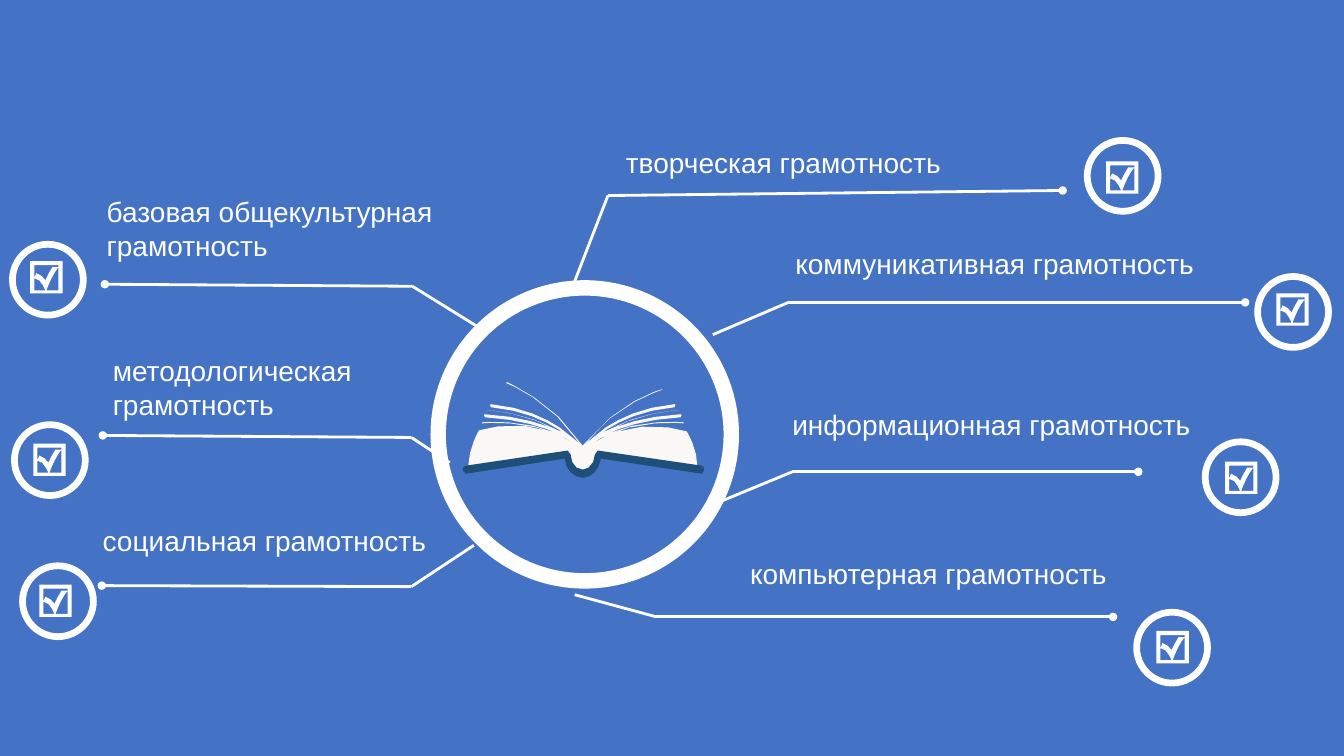
import math

from lxml import etree
from pptx import Presentation
from pptx.dml.color import RGBColor
from pptx.enum import shapes, text
from pptx.oxml.ns import qn
from pptx.util import Inches, Pt

WHITE, BLUE, PAPER, COVER = "FFFFFF", "4472C4", "F9F8F7", "1F4E79"
MAX_CURVE_STEPS = 4
BADGE = 0.77

# Outlines in hundredths of an inch, from the top left of their box
CHECKBOX = """M 4 4 L 4 29 L 15 29 C 13 25 10 17 4 17 L 6 12 C 11 14 12 15 15 19
    C 17 14 19 11 22 6 L 28 6 C 23 12 19 21 16 29 L 28 29 L 28 4
    M 0 0 L 32 0 L 32 32 L 0 32"""
PAGES = """M 222 49 C 204 43 156 37 119 66 C 82 36 35 42 16 48 C 16 48 6 64 5 86
    L 104 70 C 104 80 111 89 119 89 C 127 90 134 81 134 70 L 233 87
    C 233 65 222 49 222 49"""
SPINE = """M 119 95 C 110 95 102 87 101 76 L 3 91 L 0 88 L 0 85 L 3 83 L 104 68
    L 107 72 C 107 80 112 87 119 87 C 125 87 131 80 131 72 L 134 68 L 237 83
    L 239 85 L 239 88 L 237 91 L 137 76 C 135 87 128 95 119 95"""
LEAVES = """L 96 45 C 82 36 61 25 28 22 L 27 23 L 28 25 C 60 28 81 38 95 47 L 99 50
    C 63 29 24 28 24 28 C 24 28 64 29 101 52 L 97 50 C 82 42 58 34 22 32 L 21 33
    L 22 35 C 57 37 82 45 96 52 L 97 52 C 61 36 20 40 19 40 L 19 41
    C 20 41 65 36 102 56 L 118 68"""
FAN_START = "M 120 66 L 120 64 L 118 62 "
LEFT_TOP_LEAF = "C 91 19 44 1 44 0 L 43 1 C 44 1 89 19 116 61 "
RIGHT_TOP_LEAF = "C 86 21 41 8 41 8 L 40 7 C 41 7 88 21 116 61 "
BOOK_WIDTH = 238

# Label lines, label box, badge corner, checkbox corner, leader: dot, bend, hub end
LITERACIES = [
    (["базовая общекультурная", "грамотность"], (0.96, 1.88, 5.77, 0.77),
     (0.09, 2.39), (0.3, 2.59), [(1.04, 2.82), (4.09, 2.84), (4.72, 3.23)]),
    (["методологическая грамотность"], (1.02, 3.46, 3.09, 0.77),
     (0.11, 4.18), (0.33, 4.4), [(1.02, 4.32), (4.08, 4.34), (4.46, 4.59)]),
    (["социальная грамотность"], (0.92, 5.14, 7.37, 0.44),
     (0.19, 5.58), (0.39, 5.8), [(1.01, 5.81), (4.08, 5.82), (4.7, 5.41)]),
    (["творческая грамотность"], (6.11, 1.39, 5.94, 0.44),
     (10.75, 1.36), (10.97, 1.6), [(10.54, 1.89), (6.03, 1.94), (5.7, 2.79)]),
    (["коммуникативная грамотность"], (7.79, 2.4, 5.94, 0.44),
     (12.44, 2.71), (12.66, 2.91), [(12.35, 3), (7.82, 3), (7.07, 3.32)]),
    (["информационная грамотность"], (7.76, 3.99, 6.96, 0.44),
     (11.92, 4.35), (12.15, 4.58), [(11.29, 4.68), (7.86, 4.68), (7.11, 4.99)]),
    (["компьютерная грамотность"], (7.34, 5.47, 7.38, 0.44),
     (11.24, 6.04), (11.47, 6.26), [(11.04, 6.12), (6.51, 6.12), (5.7, 5.9)]),
]


def rgb(color):
    return RGBColor.from_string(color)


def paint(shape, color):
    shape.fill.solid()
    shape.fill.fore_color.rgb = rgb(color)
    shape.line.fill.background()
    shape.shadow.inherit = False


def sample_curve(curve):
    """Points along a cubic curve, fewer on a short one."""
    steps = min(MAX_CURVE_STEPS, math.ceil(math.dist(curve[0], curve[-1]) / 8))
    points = []
    for step in range(1, steps + 1):
        t = step / steps
        weights = ((1 - t) ** 3, 3 * t * (1 - t) ** 2, 3 * t * t * (1 - t), t ** 3)
        points.append(tuple(sum(w * p[axis] for w, p in zip(weights, curve))
                            for axis in (0, 1)))
    return points


def contours(outline):
    """Turn an outline into lists of points."""
    result = []
    tokens = iter(outline.split())
    for command in tokens:
        count = 3 if command == "C" else 1
        points = [(float(next(tokens)), float(next(tokens))) for _ in range(count)]
        if command == "M":
            result.append(points)
        elif command == "L":
            result[-1] += points
        else:
            result[-1] += sample_curve([result[-1][-1]] + points)
    return result


def add_outline(parent, left, top, outline, color, mirror_width=None):
    def place(point):
        x = point[0] if mirror_width is None else mirror_width - point[0]
        return Inches(left + x / 100), Inches(top + point[1] / 100)

    builder = None
    for contour in contours(outline):
        start, *rest = [place(point) for point in contour]
        if builder is None:
            builder = parent.build_freeform(*start, scale=1.0)
        else:
            builder.move_to(*start)
        builder.add_line_segments(rest, close=True)
    paint(builder.convert_to_shape(), color)


def add_ring(slide, left, top, size, thickness):
    ring = slide.shapes.add_shape(shapes.MSO_SHAPE.DONUT, Inches(left), Inches(top),
                                  Inches(size), Inches(size))
    ring.adjustments[0] = thickness
    paint(ring, WHITE)


def add_line(slide, start, end, dotted=False):
    line = slide.shapes.add_connector(shapes.MSO_CONNECTOR.STRAIGHT,
                                      *map(Inches, start + end))
    line.line.color.rgb = rgb(WHITE)
    line.line.width = Pt(2)
    properties = line.element.spPr
    if dotted:
        etree.SubElement(properties.find(qn("a:ln")), qn("a:headEnd"), type="oval")
    etree.SubElement(properties, qn("a:effectLst"))


def add_label(slide, box, lines):
    frame = slide.shapes.add_textbox(*map(Inches, box)).text_frame
    frame.word_wrap = True
    frame.auto_size = text.MSO_AUTO_SIZE.SHAPE_TO_FIT_TEXT
    frame.text = "\n".join(lines)
    for paragraph in frame.paragraphs:
        font = paragraph.runs[0].font
        font.name, font.size = "Arial", Pt(20)
        font.color.rgb = rgb(WHITE)


# Central ring with the open book
def add_hub(slide, left, top, size):
    add_ring(slide, left, top, size, 0.05)
    book = slide.shapes.add_group_shape().shapes
    corner = (left + 0.32, top + 1.01)
    add_outline(book, *corner, PAGES, PAPER)
    add_outline(book, *corner, SPINE, COVER)
    add_outline(book, *corner, FAN_START + LEFT_TOP_LEAF + LEAVES, PAPER)
    add_outline(book, *corner, FAN_START + RIGHT_TOP_LEAF + LEAVES, PAPER, BOOK_WIDTH)


# One kind of literacy: label, leader line and badge
def add_literacy(slide, lines, label_box, badge, checkbox, leader):
    dot, bend, hub_end = leader
    add_line(slide, dot, bend, dotted=True)
    add_line(slide, bend, hub_end)
    add_ring(slide, *badge, BADGE, 0.087)
    add_outline(slide.shapes, *checkbox, CHECKBOX, WHITE)
    add_label(slide, label_box, lines)


def main():
    deck = Presentation()
    deck.slide_width, deck.slide_height = Inches(13.33), Inches(7.5)
    slide = deck.slides.add_slide(deck.slide_layouts[6])
    slide.background.fill.solid()
    slide.background.fill.fore_color.rgb = rgb(BLUE)
    add_hub(slide, 4.27, 2.78, 3.06)
    for literacy in LITERACIES:
        add_literacy(slide, *literacy)
    deck.save("out.pptx")


if __name__ == "__main__":
    main()
